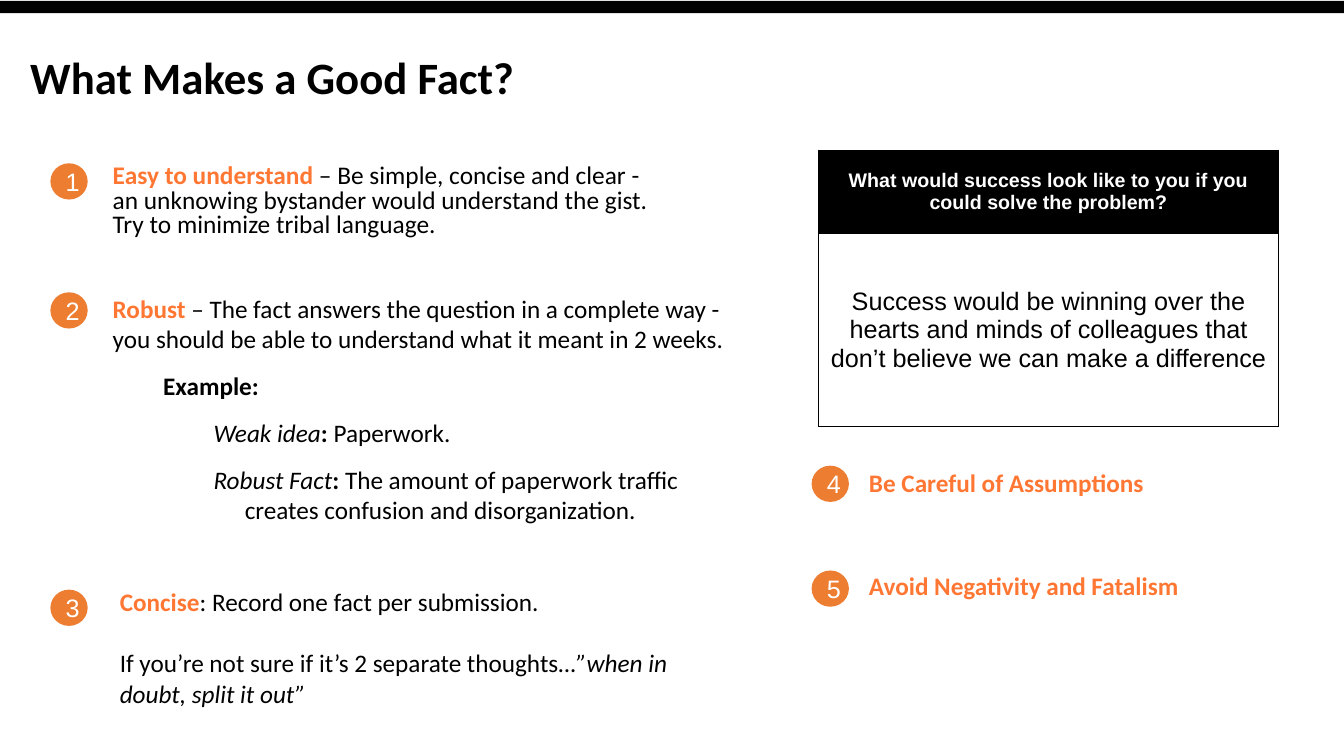
from lxml import etree
from pptx import Presentation
from pptx.dml.color import RGBColor
from pptx.enum.shapes import MSO_SHAPE
from pptx.enum.text import MSO_ANCHOR, PP_ALIGN
from pptx.oxml.ns import qn
from pptx.util import Inches, Pt

RECTANGLE, OVAL = MSO_SHAPE.RECTANGLE, MSO_SHAPE.OVAL
TOP, MIDDLE, BOTTOM = MSO_ANCHOR.TOP, MSO_ANCHOR.MIDDLE, MSO_ANCHOR.BOTTOM
CENTER = PP_ALIGN.CENTER

BLACK, WHITE, ACCENT, BADGE = "000000", "FFFFFF", "FF7733", "ED7D31"


def color(value):
    return RGBColor.from_string(value)


def key(text):
    return text, {"bold": True, "color": ACCENT}


def strong(text):
    return text, {"bold": True}


def slanted(text):
    return text, {"italic": True}


def plain(text):
    return text, {}


class SlideBuilder:
    text_font = "Calibri"
    label_font = "Arial"
    size = 18

    def __init__(self, page):
        self.page = page

    def style(self, font, name, size, fill, bold=False):
        font.name, font.size, font.bold = name, Pt(size), bold
        font.color.rgb = color(fill)

    def shape(self, kind, left, top, width, height, fill):
        shape = self.page.shapes.add_shape(
            kind, Inches(left), Inches(top), Inches(width), Inches(height))
        shape.shadow.inherit = False
        shape.fill.solid()
        shape.fill.fore_color.rgb = color(fill)
        shape.line.fill.background()
        return shape

    def badge(self, number, left, top):
        frame = self.shape(OVAL, left, top, 0.37, 0.36, BADGE).text_frame
        frame.vertical_anchor = MIDDLE
        para = frame.paragraphs[0]
        para.text, para.alignment = str(number), CENTER
        self.style(para.font, self.label_font, self.size, WHITE)

    def text(self, left, top, width, height, paragraphs, size=size,
             anchor=TOP, side_inset=0.1):
        """Each paragraph is (spans, options)."""
        box = self.page.shapes.add_textbox(
            Inches(left), Inches(top), Inches(width), Inches(height))
        frame = box.text_frame
        frame.word_wrap = True
        frame.vertical_anchor = anchor
        frame.margin_left = frame.margin_right = Inches(side_inset)
        for index, (spans, options) in enumerate(paragraphs):
            para = frame.add_paragraph() if index else frame.paragraphs[0]
            para.space_after = Pt(options.get("after", 0))
            para.line_spacing = options.get("line", 1.0)
            if "indent" in options:
                para.level = options["level"]
                properties = para._p.get_or_add_pPr()
                properties.set("marL", str(Inches(options["indent"])))
                properties.set("indent", str(Inches(-0.31)))
            self.style(para.font, self.text_font, size, BLACK)
            for words, look in spans:
                span = para.add_run()
                span.text = words
                span.font.name, span.font.size = self.text_font, Pt(size)
                span.font.bold = look.get("bold", False)
                span.font.italic = look.get("italic", False)
                span.font.color.rgb = color(look.get("color", BLACK))

    def border(self, cell):
        properties = cell._tc.get_or_add_tcPr()
        for index, side in enumerate(("lnL", "lnR", "lnT", "lnB")):
            line = etree.Element(qn("a:" + side), w=str(Pt(1)))
            fill = etree.SubElement(line, qn("a:solidFill"))
            etree.SubElement(fill, qn("a:srgbClr"), val=BLACK)
            properties.insert(index, line)

    def table(self, left, top, width, rows):
        """Each row is (height, words, size, text color, fill, bold)."""
        height = sum(row[0] for row in rows)
        table = self.page.shapes.add_table(
            len(rows), 1, Inches(left), Inches(top),
            Inches(width), Inches(height)).table
        for index, (height, words, size, ink, fill, bold) in enumerate(rows):
            table.rows[index].height = Inches(height)
            cell = table.cell(index, 0)
            cell.vertical_anchor = MIDDLE
            cell.fill.solid()
            cell.fill.fore_color.rgb = color(fill)
            self.border(cell)
            para = cell.text_frame.paragraphs[0]
            para.text, para.alignment = words, CENTER
            self.style(para.font, self.label_font, size, ink, bold)


def main():
    deck = Presentation()
    deck.slide_width, deck.slide_height = Inches(13.33), Inches(7.5)
    slide = SlideBuilder(deck.slides.add_slide(deck.slide_layouts[6]))

    # Top band and title
    slide.shape(RECTANGLE, 0, 0.01, 13.33, 0.12, BLACK)
    slide.text(0.3, 0.36, 12.72, 0.72,
               [([strong("What Makes a Good Fact?")], {"line": 0.9})],
               size=32, anchor=BOTTOM, side_inset=0)

    # Numbered badges
    badges = [(0.5, 1.62), (0.5, 2.9), (0.5, 5.85), (8.05, 4.62), (8.05, 5.66)]
    for number, (left, top) in enumerate(badges, start=1):
        slide.badge(number, left, top)

    # Left column: the first three rules
    slide.text(1.02, 1.59, 5.7, 1.04, [
        ([key("Easy to understand "),
          plain("– Be simple, concise and clear - an unknowing bystander would "
                "understand the gist. Try to minimize tribal language.")],
         {"line": 0.8, "after": 12})], size=18.1)
    slide.text(1.02, 2.86, 6.47, 2.42, [
        ([key("Robust"),
          plain(" – The fact answers the question in a complete way - you "
                "should be able to understand what it meant in 2 weeks.")],
         {"after": 12}),
        ([strong("Example:")], {"level": 1, "indent": 0.81, "after": 12}),
        ([slanted("Weak idea"), strong(": "), plain("Paperwork.")],
         {"level": 2, "indent": 1.31, "after": 12}),
        ([slanted("Robust Fact"), strong(": "),
          plain("The amount of paperwork traffic creates confusion and "
                "disorganization.")],
         {"level": 2, "indent": 1.31, "after": 30})])
    slide.text(1.09, 5.77, 5.7, 1.31, [
        ([key("Concise"), plain(": Record one fact per submission.")],
         {"after": 22}),
        ([plain("If you’re not sure if it’s 2 separate thoughts"),
          slanted("…”when in doubt, split it out”")], {})])

    # Right column: sample answer and the last two rules
    slide.table(8.12, 1.49, 4.56, [
        (0.83, "What would success look like to you if you could solve the "
               "problem?", 14, WHITE, BLACK, True),
        (1.91, "Success would be winning over the hearts and minds of "
               "colleagues that don’t believe we can make a difference",
         18, BLACK, WHITE, False)])
    for top, words in ((4.59, "Be Careful of Assumptions"),
                       (5.61, "Avoid Negativity and Fatalism")):
        slide.text(8.52, top, 4.81, 0.4, [([key(words)], {})])

    deck.save("out.pptx")


if __name__ == "__main__":
    main()
